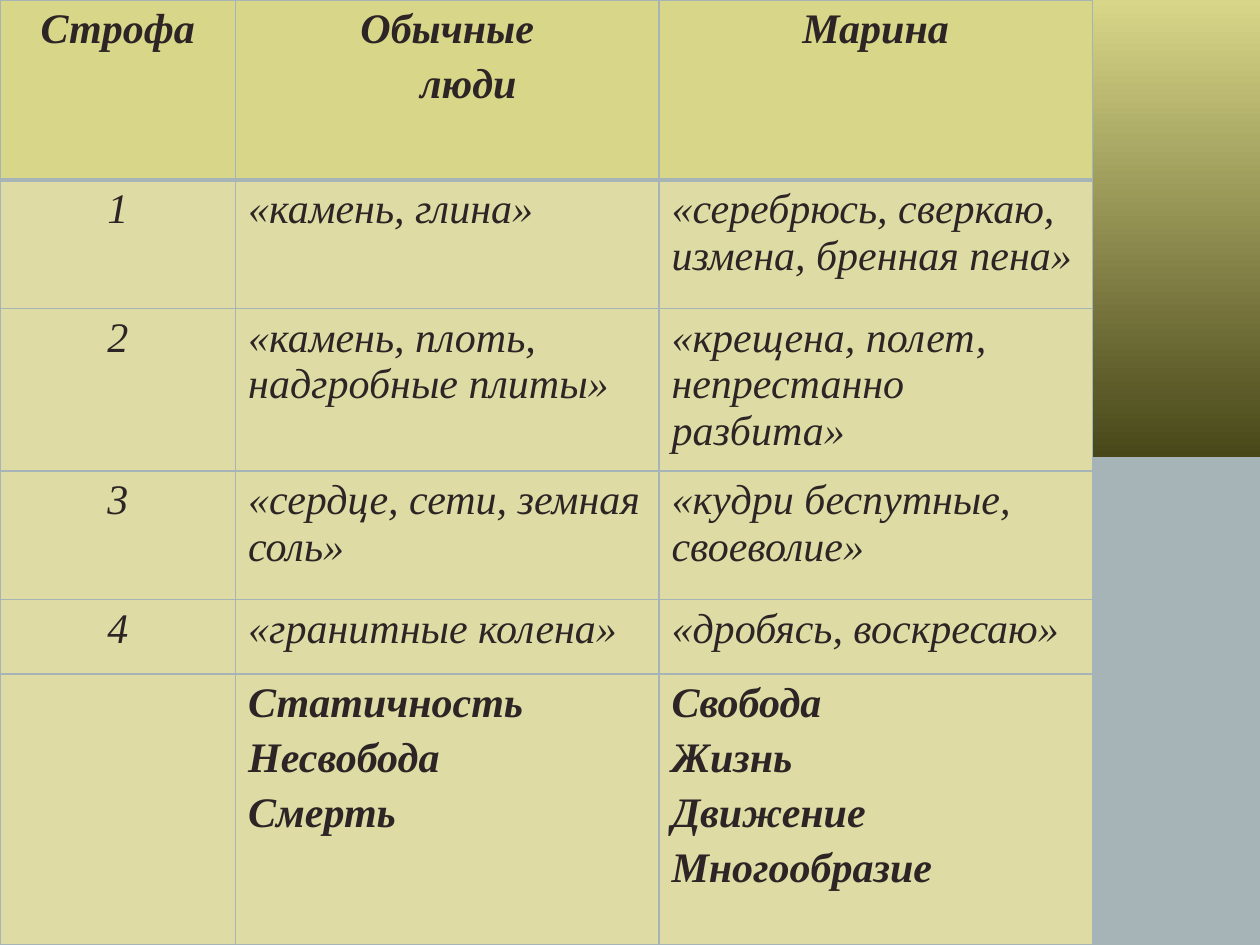
from lxml import etree
from pptx import Presentation
from pptx.dml.color import RGBColor
from pptx.enum.shapes import MSO_SHAPE
from pptx.enum.text import PP_ALIGN
from pptx.oxml.ns import qn
from pptx.util import Inches, Pt

RECT = MSO_SHAPE.RECTANGLE
CENTER, LEFT = PP_ALIGN.CENTER, PP_ALIGN.LEFT
FONT = "Times New Roman"
COLORS = {
    "background": "A7B4B7",
    "border": "A7B4B7",
    "header": "D8D688",
    "body": "DEDCA4",
    "text": "2D2525",
    "band_top": "D8D688",
    "band_bottom": "484719",
}
COLUMNS = [1.87, 3.36, 3.44]
ROWS = [1.43, 1.02, 1.29, 1.02, 0.59, 2.15]
STANZAS = [
    ["Строфа", "Обычные\nлюди", "Марина"],
    ["1", "«камень, глина»", "«серебрюсь, сверкаю, измена, бренная пена»"],
    ["2", "«камень, плоть, надгробные плиты»", "«крещена, полет, непрестанно разбита»"],
    ["3", "«сердце, сети, земная соль»", "«кудри беспутные, своеволие»"],
    ["4", "«гранитные колена»", "«дробясь, воскресаю»"],
    ["", "Статичность\nНесвобода\nСмерть", "Свобода\nЖизнь\nДвижение\nМногообразие"],
]


def rgb(name):
    """Return the named colour."""
    return RGBColor.from_string(COLORS[name])


def set_borders(cell, top, bottom):
    """Draw the four cell borders, with top and bottom widths in points."""
    tcPr = cell._tc.get_or_add_tcPr()
    widths = {"a:lnL": 1, "a:lnR": 1, "a:lnT": top, "a:lnB": bottom}
    for i, (tag, width) in enumerate(widths.items()):
        ln = etree.Element(qn(tag), w=str(Pt(width)))
        fill = etree.SubElement(ln, qn("a:solidFill"))
        etree.SubElement(fill, qn("a:srgbClr"), val=COLORS["border"])
        tcPr.insert(i, ln)


def write_cell(cell, text, align, bold):
    """Write the lines of a cell as paragraphs."""
    tf = cell.text_frame
    tf.text = text
    for i, p in enumerate(tf.paragraphs):
        p.alignment = align
        if i:
            p.space_before = Pt(4.8)
        p.font.name = FONT
        p.font.size = Pt(24)
        p.font.bold = bold
        p.font.italic = True
        p.font.color.rgb = rgb("text")


def add_stanza_table(s, x, y):
    """Add the comparison of stanzas with its top left corner at x, y."""
    frame = s.shapes.add_table(len(ROWS), len(COLUMNS), Inches(x), Inches(y),
                               Inches(sum(COLUMNS)), Inches(sum(ROWS)))
    table = frame.table
    for column, width in zip(table.columns, COLUMNS):
        column.width = Inches(width)
    for row, height in zip(table.rows, ROWS):
        row.height = Inches(height)
    for i, texts in enumerate(STANZAS):
        header = i == 0
        for j, text in enumerate(texts):
            cell = table.cell(i, j)
            cell.fill.solid()
            cell.fill.fore_color.rgb = rgb("header" if header else "body")
            set_borders(cell, 3 if i == 1 else 1, 3 if header else 1)
            align = CENTER if header or j == 0 else LEFT
            write_cell(cell, text, align, header or i == len(ROWS) - 1)
    people = table.cell(0, 1).text_frame.paragraphs[1]
    people._p.get_or_add_pPr().set("marL", str(Pt(24)))


def add_side_band(s, x, y, w, h):
    """Add the shaded band beside the table."""
    sp = s.shapes.add_shape(RECT, Inches(x), Inches(y), Inches(w), Inches(h))
    sp.shadow.inherit = False
    sp.line.fill.background()
    sp.fill.gradient()
    sp.fill.gradient_angle = 270
    for stop, name, position in zip(sp.fill.gradient_stops, ("band_top", "band_bottom"), (0, 1)):
        stop.color.rgb = rgb(name)
        stop.position = position


def main():
    """Build the slide and save it."""
    prs = Presentation()
    prs.slide_width, prs.slide_height = Inches(10), Inches(7.5)
    s = prs.slides.add_slide(prs.slide_layouts[6])
    s.background.fill.solid()
    s.background.fill.fore_color.rgb = rgb("background")
    add_side_band(s, 8.65, 0, 1.35, 3.63)
    add_stanza_table(s, 0, 0)
    prs.save("out.pptx")


if __name__ == "__main__":
    main()
